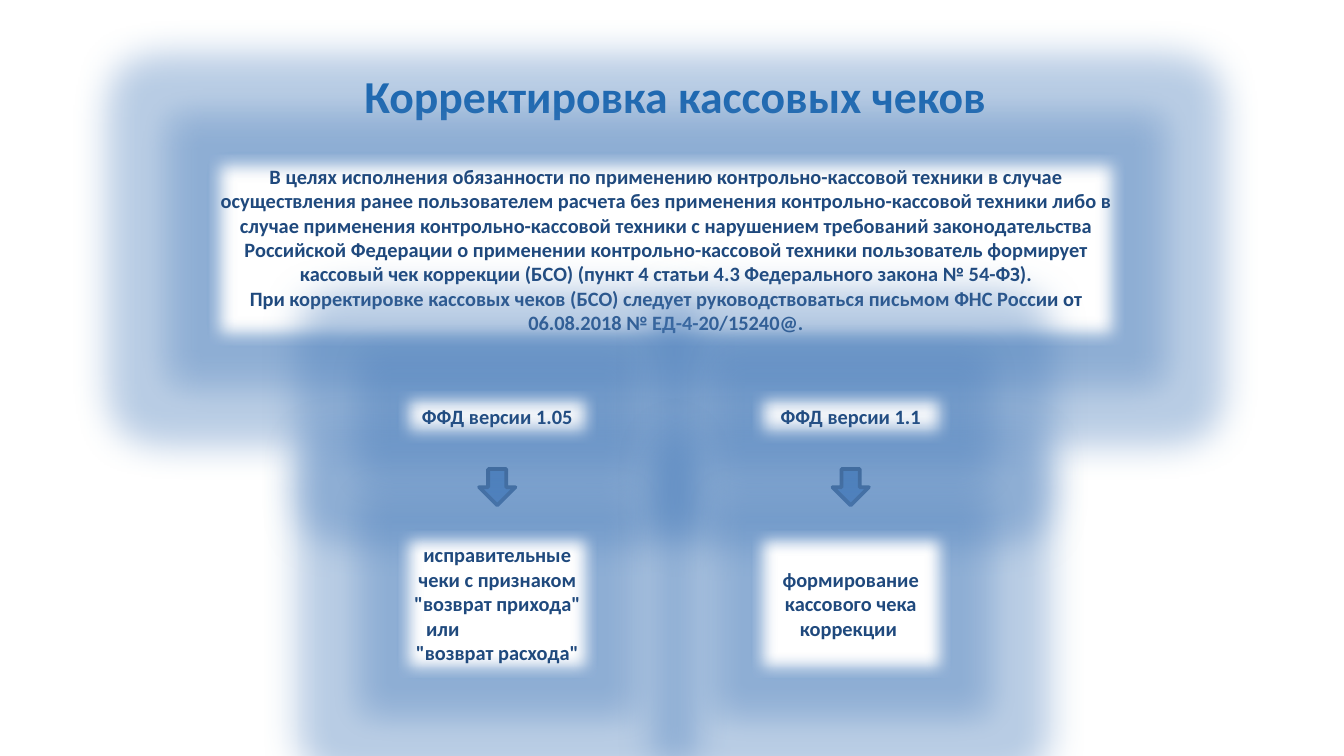
from lxml import etree
from pptx import Presentation
from pptx.dml.color import RGBColor
from pptx.enum.shapes import MSO_SHAPE
from pptx.enum.text import MSO_ANCHOR, PP_ALIGN
from pptx.oxml.ns import qn
from pptx.util import Inches, Pt

RECTANGLE, DOWN_ARROW = MSO_SHAPE.RECTANGLE, MSO_SHAPE.DOWN_ARROW
MIDDLE = MSO_ANCHOR.MIDDLE
CENTER, LEFT = PP_ALIGN.CENTER, PP_ALIGN.LEFT

TITLE = "Корректировка кассовых чеков"
INTRODUCTION = [
    ("В целях исполнения обязанности по применению контрольно-кассовой техники "
     "в случае осуществления ранее пользователем расчета без применения "
     "контрольно-кассовой техники либо в случае применения контрольно-кассовой "
     "техники с нарушением требований законодательства Российской Федерации о "
     "применении контрольно-кассовой техники пользователь формирует кассовый чек "
     "коррекции (БСО) (пункт 4 статьи 4.3 Федерального закона № 54-ФЗ).", CENTER),
    ("При корректировке кассовых чеков (БСО) следует руководствоваться письмом "
     "ФНС России от 06.08.2018 № ЕД-4-20/15240@.", CENTER),
]
VERSIONS = [
    {
        "heading": [("ФФД версии 1.05", CENTER)],
        "action": [
            ('исправительные чеки с признаком "возврат прихода"', CENTER),
            ("или", LEFT),
            ('"возврат расхода"', CENTER),
        ],
    },
    {
        "heading": [("ФФД версии 1.1", CENTER)],
        "action": [("формирование кассового чека коррекции ", CENTER)],
    },
]

THEME = {
    "font": "Calibri",
    "title_size": Pt(24.5),
    "body_size": Pt(10.9),
    "line_width": Pt(2),
    "title": RGBColor.from_string("005AA9"),
    "text": RGBColor.from_string("1F497D"),
    "white": RGBColor.from_string("FFFFFF"),
    "accent": RGBColor.from_string("4F81BD"),
    "arrow_line": RGBColor.from_string("3A5F8C"),
    "glow_radius": Pt(39),
    "glow_alpha": 40000,
    "soft_edge": Pt(8),
}

SLIDE_WIDTH = Inches(10)
SLIDE_HEIGHT = SLIDE_WIDTH * 9 // 16
COLUMN_LEFT, COLUMN_STEP, COLUMN_WIDTH = 2.95, 2.63, 1.5
HEADING_TOP, HEADING_HEIGHT = 2.89, 0.42
ARROW_TOP, ARROW_SIZE = 3.49, 0.27
ACTION_TOP, ACTION_HEIGHT = 3.93, 1.12
LEFT_INDENT = 0.14


def write_text(shape, paragraphs, size, color):
    frame = shape.text_frame
    frame.word_wrap = True
    frame.vertical_anchor = MIDDLE
    frame.margin_left = frame.margin_right = Inches(0.08)
    frame.margin_top = frame.margin_bottom = Inches(0.04)
    for index, (text, alignment) in enumerate(paragraphs):
        paragraph = frame.paragraphs[0] if index == 0 else frame.add_paragraph()
        paragraph.alignment = alignment
        if alignment == LEFT:
            paragraph._p.get_or_add_pPr().set("marL", str(Inches(LEFT_INDENT)))
        run = paragraph.add_run()
        run.text = text
        run.font.name = THEME["font"]
        run.font.size = size
        run.font.bold = True
        run.font.color.rgb = color


def add_filled_shape(slide, kind, box, fill, line):
    shape = slide.shapes.add_shape(kind, *map(Inches, box))
    shape.shadow.inherit = False
    shape.fill.solid()
    shape.fill.fore_color.rgb = fill
    shape.line.color.rgb = line
    shape.line.width = THEME["line_width"]
    return shape


def add_glow(shape):
    """Surround the shape with a blue glow and soften its own edge."""
    effects = shape._element.spPr.find(qn("a:effectLst"))
    glow = etree.SubElement(effects, qn("a:glow"), rad=str(THEME["glow_radius"]))
    color = etree.SubElement(glow, qn("a:srgbClr"), val=str(THEME["accent"]))
    etree.SubElement(color, qn("a:alpha"), val=str(THEME["glow_alpha"]))
    etree.SubElement(effects, qn("a:softEdge"), rad=str(THEME["soft_edge"]))


def add_text_panel(slide, box, paragraphs):
    panel = add_filled_shape(slide, RECTANGLE, box, THEME["white"], THEME["accent"])
    add_glow(panel)
    write_text(panel, paragraphs, THEME["body_size"], THEME["text"])


def main():
    presentation = Presentation()
    presentation.slide_width = SLIDE_WIDTH
    presentation.slide_height = SLIDE_HEIGHT
    slide = presentation.slides.add_slide(presentation.slide_layouts[5])

    title = slide.shapes.title
    title.left, title.top = Inches(2.32), Inches(0.49)
    title.width, title.height = Inches(5.41), Inches(0.43)
    write_text(title, [(TITLE, CENTER)], THEME["title_size"], THEME["title"])

    add_text_panel(slide, (1.54, 1.13, 6.83, 1.45), INTRODUCTION)

    columns = [COLUMN_LEFT + index * COLUMN_STEP for index in range(len(VERSIONS))]
    for left, version in zip(columns, VERSIONS):
        add_text_panel(slide, (left, HEADING_TOP, COLUMN_WIDTH, HEADING_HEIGHT),
                       version["heading"])
    for left in columns:
        arrow_left = left + (COLUMN_WIDTH - ARROW_SIZE) / 2
        add_filled_shape(slide, DOWN_ARROW,
                         (arrow_left, ARROW_TOP, ARROW_SIZE, ARROW_SIZE),
                         THEME["accent"], THEME["arrow_line"])
    for left, version in zip(columns, VERSIONS):
        add_text_panel(slide, (left, ACTION_TOP, COLUMN_WIDTH, ACTION_HEIGHT),
                       version["action"])

    presentation.save("out.pptx")


if __name__ == "__main__":
    main()
